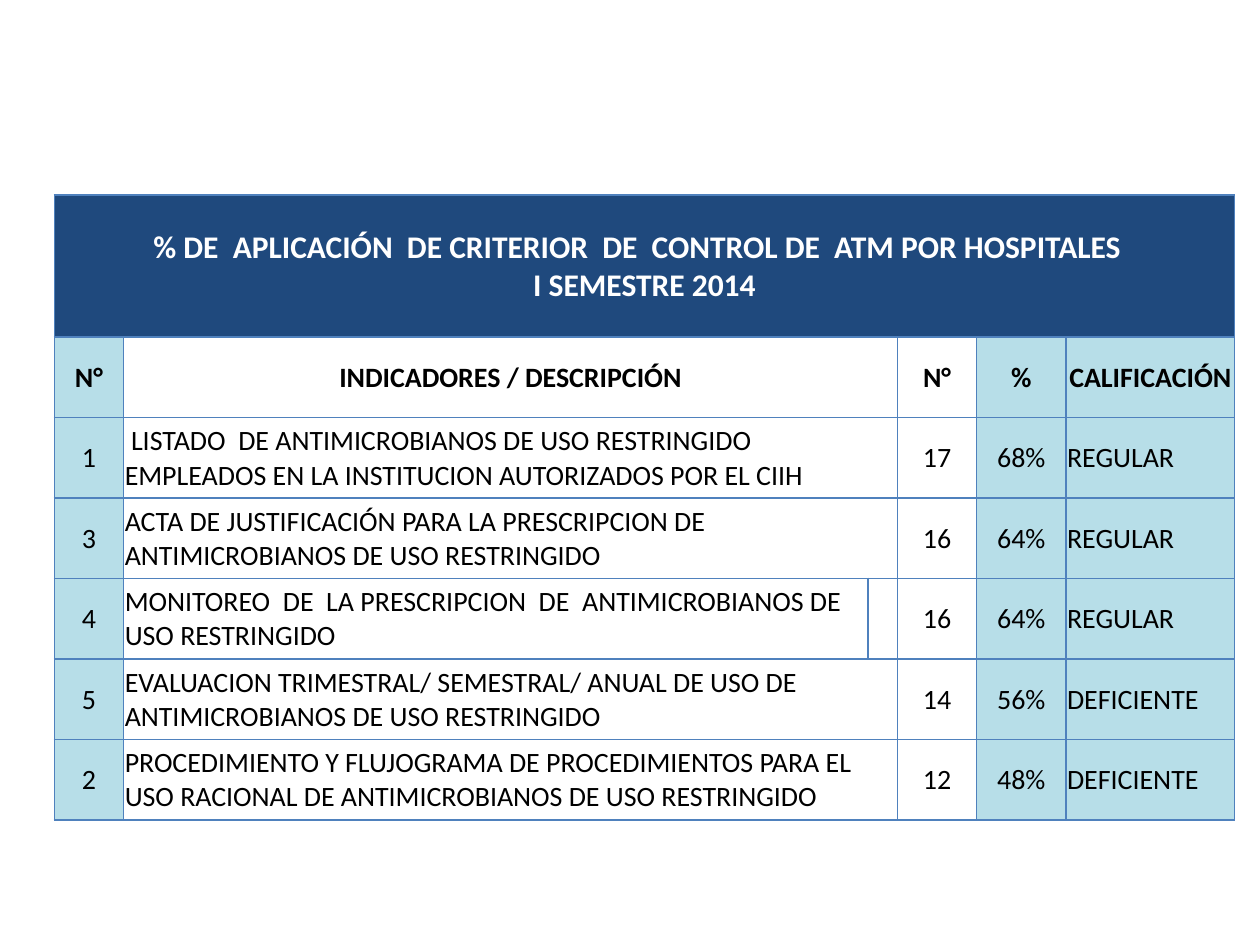
from dataclasses import dataclass

import pptx
import pptx.dml.color
import pptx.enum.text
import pptx.oxml
import pptx.oxml.ns
import pptx.util

Pt = pptx.util.Pt
CENTER = pptx.enum.text.PP_ALIGN.CENTER
LEFT = pptx.enum.text.PP_ALIGN.LEFT


@dataclass(frozen=True)
class Theme:
    font: str = "Calibri"
    title_size: int = 18
    body_size: int = 16
    navy: str = "1F497D"
    sky: str = "B7DEE8"
    white: str = "FFFFFF"
    black: str = "000000"
    border: str = "4F81BD"


THEME = Theme()

TITLE = ("% DE  APLICACIÓN  DE CRITERIOR  DE  CONTROL DE  ATM POR HOSPITALES  \n"
         "I SEMESTRE 2014")
HEADINGS = ("N°", "INDICADORES / DESCRIPCIÓN", "N°", "%", "CALIFICACIÓN")
INDICATORS = (
    ("1", " LISTADO  DE ANTIMICROBIANOS DE USO RESTRINGIDO EMPLEADOS EN LA "
          "INSTITUCION AUTORIZADOS POR EL CIIH", "17", "68%", "REGULAR"),
    ("3", "ACTA DE JUSTIFICACIÓN PARA LA PRESCRIPCION DE ANTIMICROBIANOS DE "
          "USO RESTRINGIDO", "16", "64%", "REGULAR"),
    ("4", "MONITOREO  DE  LA PRESCRIPCION  DE  ANTIMICROBIANOS DE USO "
          "RESTRINGIDO", "16", "64%", "REGULAR"),
    ("5", "EVALUACION TRIMESTRAL/ SEMESTRAL/ ANUAL DE USO DE  ANTIMICROBIANOS "
          "DE USO RESTRINGIDO", "14", "56%", "DEFICIENTE"),
    ("2", "PROCEDIMIENTO Y FLUJOGRAMA DE PROCEDIMIENTOS PARA EL USO RACIONAL "
          "DE ANTIMICROBIANOS DE USO RESTRINGIDO", "12", "48%", "DEFICIENTE"),
)
UNMERGED_INDICATOR = "4"

COLUMN_WIDTHS = (39.6, 425.4, 16.8, 45.3, 51, 96.5)
TITLE_HEIGHT, ROW_HEIGHT = 81.2, 46
TEXT_COLUMNS = (0, 1, 3, 4, 5)  # column 2 only widens the description
FILLS = (THEME.sky, THEME.white, THEME.white, THEME.white, THEME.sky, THEME.sky)
ALIGNMENTS = (CENTER, LEFT, LEFT, CENTER, CENTER, LEFT)


def rgb(color):
    return pptx.dml.color.RGBColor.from_string(color)


def style_cell(cell, fill):
    """Give a cell its borders, fill, margins and vertical anchor."""
    properties = cell._tc.get_or_add_tcPr()
    for side in ("lnL", "lnR", "lnT", "lnB"):
        properties.append(pptx.oxml.parse_xml(
            f'<a:{side} {pptx.oxml.ns.nsdecls("a")} w="{Pt(1)}"><a:solidFill>'
            f'<a:srgbClr val="{THEME.border}"/></a:solidFill></a:{side}>'))
    cell.fill.solid()
    cell.fill.fore_color.rgb = rgb(fill)
    cell.margin_left = cell.margin_right = cell.margin_top = Pt(0.7)
    cell.margin_bottom = Pt(0)
    cell.vertical_anchor = pptx.enum.text.MSO_ANCHOR.MIDDLE


def write_cell(cell, text, alignment, size=THEME.body_size, color=THEME.black, bold=False):
    para = cell.text_frame.paragraphs[0]
    para.text = text
    para.alignment = alignment
    para.font.name = THEME.font
    para.font.size = Pt(size)
    para.font.bold = bold
    para.font.color.rgb = rgb(color)


def add_grid(page):
    row_heights = [TITLE_HEIGHT] + [ROW_HEIGHT] * (1 + len(INDICATORS))
    table = page.shapes.add_table(
        len(row_heights), len(COLUMN_WIDTHS), Pt(31), Pt(111.4),
        Pt(sum(COLUMN_WIDTHS)), Pt(sum(row_heights))).table
    table.first_row = table.horz_banding = False
    for column, width in zip(table.columns, COLUMN_WIDTHS):
        column.width = Pt(width)
    for row_number, (row, height) in enumerate(zip(table.rows, row_heights)):
        row.height = Pt(height)
        for cell, fill in zip(row.cells, FILLS):
            style_cell(cell, fill if row_number else THEME.navy)
    return table


def fill_table(table):
    table.cell(0, 0).merge(table.cell(0, len(COLUMN_WIDTHS) - 1))
    write_cell(table.cell(0, 0), TITLE, CENTER, THEME.title_size, THEME.white, bold=True)
    for row, texts in enumerate((HEADINGS,) + INDICATORS, start=1):
        is_heading = row == 1
        if texts[0] != UNMERGED_INDICATOR:
            table.cell(row, 1).merge(table.cell(row, 2))
        for column, text in zip(TEXT_COLUMNS, texts):
            alignment = CENTER if is_heading else ALIGNMENTS[column]
            write_cell(table.cell(row, column), text, alignment, bold=is_heading)


def main():
    deck = pptx.Presentation()
    deck.slide_width, deck.slide_height = Pt(720), Pt(540)
    page = deck.slides.add_slide(deck.slide_layouts[6])
    fill_table(add_grid(page))
    deck.save("out.pptx")


if __name__ == "__main__":
    main()
